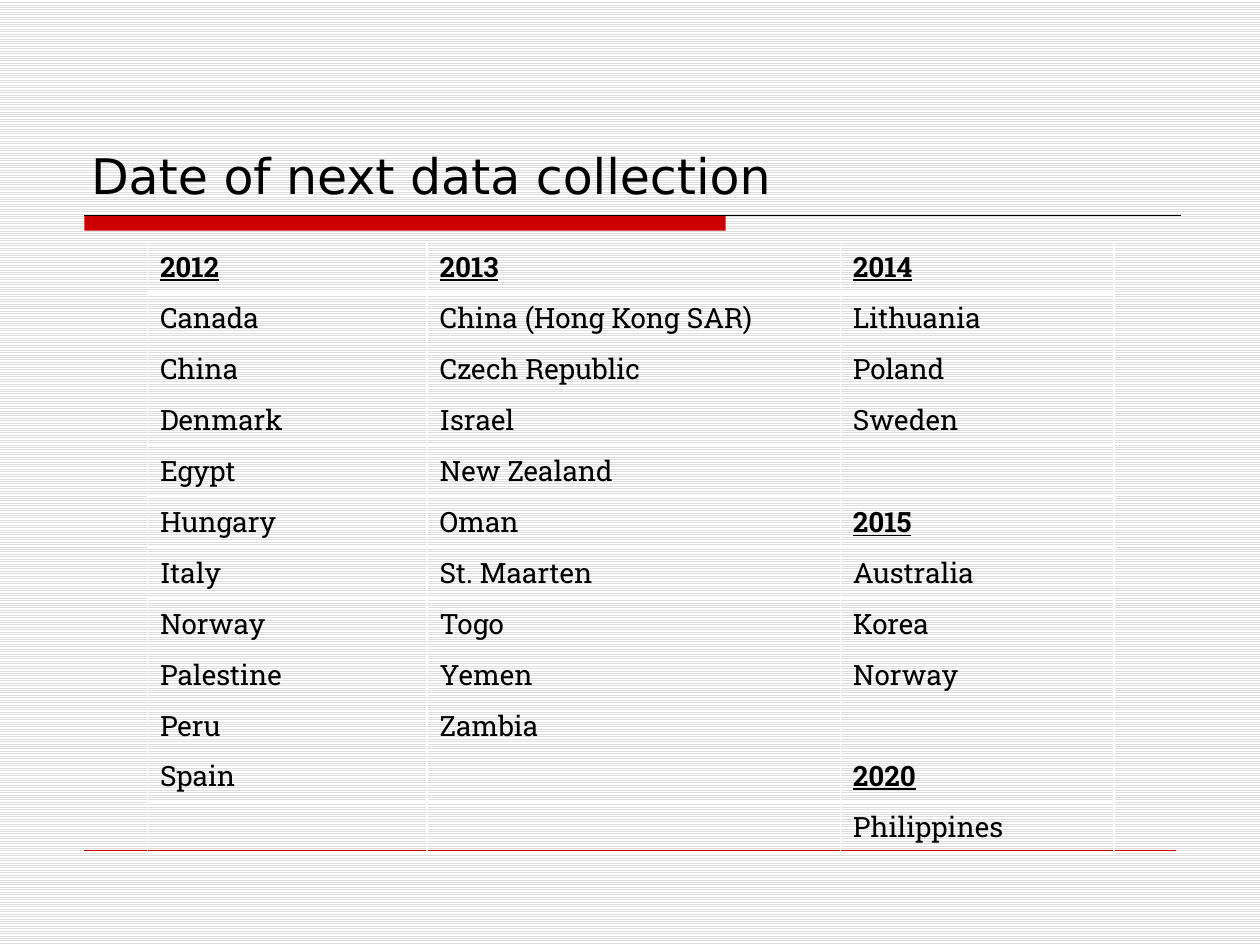
from dataclasses import dataclass

from lxml.etree import SubElement
from pptx import Presentation
from pptx.dml.color import RGBColor
from pptx.enum.dml import MSO_PATTERN
from pptx.enum.shapes import MSO_CONNECTOR, MSO_SHAPE
from pptx.enum.text import MSO_ANCHOR, PP_ALIGN
from pptx.oxml.ns import qn
from pptx.util import Inches, Pt


@dataclass(frozen=True)
class Theme:
    ink: str = "000000"
    accent: str = "CC0000"
    paper: str = "FFFFFF"
    stripe: str = "DDDDDD"
    title_font: str = "DejaVu Sans"
    body_font: str = "Roboto Slab"
    title_size: float = 28
    body_size: float = 16


@dataclass(frozen=True)
class Rule:
    left: float
    right: float
    y: float
    color: str
    weight: float


@dataclass(frozen=True)
class YearColumn:
    width: float
    entries: tuple[str, ...]


THEME = Theme()
RULES = (
    Rule(0.67, 9.37, 1.71, THEME.ink, 0.75),
    Rule(0.67, 9.33, 6.75, THEME.accent, 0.25),
)
COLUMNS = (
    YearColumn(2.22, ("2012", "Canada", "China", "Denmark", "Egypt", "Hungary",
                      "Italy", "Norway", "Palestine", "Peru", "Spain", "")),
    YearColumn(3.28, ("2013", "China (Hong Kong SAR)", "Czech Republic", "Israel",
                      "New Zealand", "Oman", "St. Maarten", "Togo", "Yemen",
                      "Zambia", "", "")),
    YearColumn(2.17, ("2014", "Lithuania", "Poland", "Sweden", "", "2015",
                      "Australia", "Korea", "Norway", "", "2020", "Philippines")),
)
TABLE_HEIGHT = 4.83
SHORT_ROW, SHORT_HEIGHT = 9, 0.37


def rgb(color: str) -> RGBColor:
    return RGBColor.from_string(color)


def write_text(frame, text: str, *, font: str, size: float, bold: bool = False,
               underline: bool = False, align=PP_ALIGN.LEFT) -> None:
    paragraph = frame.paragraphs[0]
    paragraph.alignment = align
    if not text:
        paragraph.font.size = Pt(size)
        return
    run = paragraph.add_run()
    run.text = text
    run.font.name = font
    run.font.size = Pt(size)
    run.font.bold = bold
    run.font.underline = underline
    run.font.color.rgb = rgb(THEME.ink)


def draw_rule(slide, rule: Rule) -> None:
    line = slide.shapes.add_connector(
        MSO_CONNECTOR.STRAIGHT, Inches(rule.left), Inches(rule.y),
        Inches(rule.right), Inches(rule.y))
    line.line.color.rgb = rgb(rule.color)
    line.line.width = Pt(rule.weight)
    SubElement(line._element.spPr, qn("a:effectLst"))


def draw_title_bar(slide) -> None:
    bar = slide.shapes.add_shape(MSO_SHAPE.RECTANGLE, Inches(0.67), Inches(1.71),
                                 Inches(5.09), Inches(0.12))
    bar.shadow.inherit = False
    bar.fill.solid()
    bar.fill.fore_color.rgb = rgb(THEME.accent)
    bar.line.fill.background()


def set_borders(cell, color: str, top: float, bottom: float) -> None:
    properties = cell._tc.get_or_add_tcPr()
    for side, weight in (("L", 1), ("R", 1), ("T", top), ("B", bottom)):
        border = SubElement(properties, qn(f"a:ln{side}"), w=str(Pt(weight)))
        fill = SubElement(border, qn("a:solidFill"))
        SubElement(fill, qn("a:srgbClr"), val=color)


def draw_schedule(slide, columns: tuple[YearColumn, ...]) -> None:
    row_count = len(columns[0].entries)
    schedule = slide.shapes.add_table(
        row_count, len(columns), Inches(1.17), Inches(1.92),
        Inches(sum(column.width for column in columns)), Inches(TABLE_HEIGHT)).table
    schedule.first_row = False
    schedule.horz_banding = False
    row_height = (TABLE_HEIGHT - SHORT_HEIGHT) / (row_count - 1)
    for index, row in enumerate(schedule.rows):
        row.height = Inches(SHORT_HEIGHT if index == SHORT_ROW else row_height)
    for column_index, column in enumerate(columns):
        schedule.columns[column_index].width = Inches(column.width)
        for row_index, entry in enumerate(column.entries):
            cell = schedule.cell(row_index, column_index)
            set_borders(cell, THEME.paper, top=3 if row_index == 1 else 1,
                        bottom=3 if row_index == 0 else 1)
            cell.fill.background()
            is_year = entry.isdigit()
            write_text(cell.text_frame, entry, font=THEME.body_font,
                       size=THEME.body_size, bold=is_year, underline=is_year)


def main() -> None:
    deck = Presentation()
    deck.slide_width, deck.slide_height = Inches(10), Inches(7.5)
    slide = deck.slides.add_slide(deck.slide_layouts[5])

    backdrop = slide.background.fill
    backdrop.patterned()
    backdrop.pattern = MSO_PATTERN.LIGHT_HORIZONTAL
    backdrop.fore_color.rgb = rgb(THEME.stripe)
    backdrop.back_color.rgb = rgb(THEME.paper)

    title = slide.shapes.title
    title.left, title.top = Inches(-1.08), Inches(0.5)
    title.width, title.height = Inches(9), Inches(1.17)
    title.text_frame.vertical_anchor = MSO_ANCHOR.BOTTOM
    write_text(title.text_frame, "Date of next data collection",
               font=THEME.title_font, size=THEME.title_size, align=PP_ALIGN.CENTER)

    draw_title_bar(slide)
    for rule in RULES:
        draw_rule(slide, rule)
    draw_schedule(slide, COLUMNS)
    deck.save("out.pptx")


if __name__ == "__main__":
    main()
